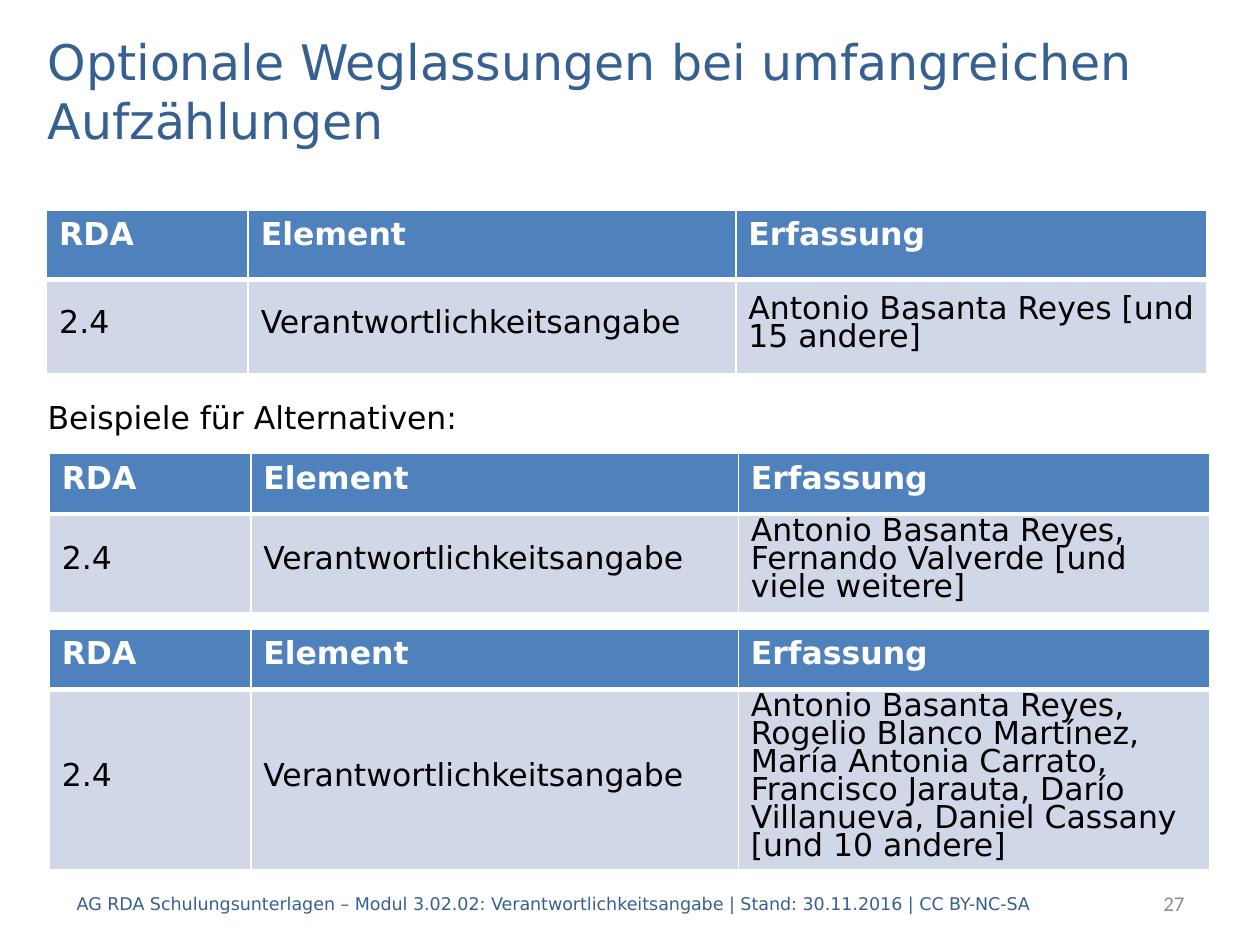
from dataclasses import dataclass

from lxml.etree import SubElement
from pptx import Presentation
from pptx.dml.color import RGBColor as RGB
from pptx.enum.shapes import MSO_SHAPE as SHAPE
from pptx.enum.text import MSO_ANCHOR as ANCHOR, MSO_AUTO_SIZE as AUTO, PP_ALIGN as ALIGN
from pptx.oxml.ns import qn
from pptx.util import Inches, Pt


@dataclass(frozen=True)
class Theme:
    """Colours, fonts and type sizes of the slide."""
    navy: str = "376092"
    header: str = "4F81BD"
    body: str = "D0D8E8"
    white: str = "FFFFFF"
    black: str = "000000"
    gray: str = "8C8C8C"
    font: str = "DejaVu Sans"
    number_font: str = "Calibri"
    title: int = 28
    text: int = 18
    number: int = 12
    footer: int = 10


T = Theme()
COLUMNS = (1.6, 3.87, 3.74)
HEADINGS = ("RDA", "Element", "Erfassung")


def style(p, size, color, font=T.font, bold=False):
    """Format every run of a paragraph."""
    for r in p.runs:
        r.font.size, r.font.name, r.font.bold = Pt(size), font, bold
        r.font.color.rgb = RGB.from_string(color)


def add_text(s, text, box, size, color, font=T.font, align=ALIGN.LEFT):
    """Add a wrapping text box centred vertically."""
    tf = s.shapes.add_textbox(*map(Inches, box)).text_frame
    tf.word_wrap, tf.auto_size = True, AUTO.NONE
    tf.vertical_anchor = ANCHOR.MIDDLE
    p = tf.paragraphs[0]
    p.text, p.alignment = text, align
    style(p, size, color, font)


def add_label(s, text, box):
    """Add a white rectangle that carries a subheading."""
    sp = s.shapes.add_shape(SHAPE.RECTANGLE, *map(Inches, box))
    sp.shadow.inherit = False
    sp.fill.solid()
    sp.fill.fore_color.rgb = RGB.from_string(T.white)
    sp.line.fill.background()
    tf = sp.text_frame
    tf.word_wrap, tf.auto_size = False, AUTO.SHAPE_TO_FIT_TEXT
    tf.vertical_anchor = ANCHOR.TOP
    p = tf.paragraphs[0]
    p.text, p.alignment = text, ALIGN.LEFT
    style(p, T.text, T.black)


def set_borders(cell, top, bottom):
    """Draw white cell borders, one point wide at the sides."""
    pr = cell._tc.get_or_add_tcPr()
    widths = {"a:lnL": 1, "a:lnR": 1, "a:lnT": top, "a:lnB": bottom}
    for tag, width in widths.items():
        ln = SubElement(pr, qn(tag), w=str(Pt(width)))
        fill = SubElement(ln, qn("a:solidFill"))
        SubElement(fill, qn("a:srgbClr"), val=T.white)


def fill_cell(cell, text, is_header):
    """Write and format a header or body cell."""
    set_borders(cell, *((1, 3) if is_header else (3, 1)))
    cell.fill.solid()
    cell.fill.fore_color.rgb = RGB.from_string(T.header if is_header else T.body)
    p = cell.text_frame.paragraphs[0]
    p.text = text
    style(p, T.text, T.white if is_header else T.black, bold=is_header)
    if not is_header:
        cell.vertical_anchor = ANCHOR.MIDDLE
        p.line_spacing = Pt(16)
        p.space_before = p.space_after = Pt(6)


def add_example(s, left, top, heights, entry):
    """Add a table that shows how one statement is recorded."""
    frame = s.shapes.add_table(2, len(COLUMNS), Inches(left), Inches(top),
                               Inches(sum(COLUMNS)), Inches(sum(heights)))
    table = frame.table
    for column, width in zip(table.columns, COLUMNS):
        column.width = Inches(width)
    rows = (HEADINGS, ("2.4", "Verantwortlichkeitsangabe", entry))
    for i, (height, texts) in enumerate(zip(heights, rows)):
        table.rows[i].height = Inches(height)
        for j, text in enumerate(texts):
            fill_cell(table.cell(i, j), text, i == 0)


def main():
    """Build and save the slide."""
    prs = Presentation()
    prs.slide_width, prs.slide_height = Inches(10), Inches(7.5)
    s = prs.slides.add_slide(prs.slide_layouts[6])
    add_text(s, "AG RDA Schulungsunterlagen – Modul 3.02.02: Verantwortlichkeitsangabe"
             " | Stand: 30.11.2016 | CC BY-NC-SA",
             (0.51, 6.97, 8.58, 0.4), T.footer, T.navy)
    add_text(s, "Optionale Weglassungen bei umfangreichen Aufzählungen",
             (0.28, 0.44, 9.45, 0.56), T.title, T.navy)
    add_example(s, 0.37, 1.67, (0.55, 0.75), "Antonio Basanta Reyes [und 15 andere]")
    add_label(s, "Beispiele für Alternativen:", (0.28, 3.11, 3.51, 0.4))
    add_example(s, 0.39, 3.6, (0.48, 0.78),
                "Antonio Basanta Reyes, Fernando Valverde [und viele weitere]")
    add_example(s, 0.39, 4.99, (0.48, 1.43),
                "Antonio Basanta Reyes, Rogelio Blanco Martínez, María Antonia Carrato, "
                "Francisco Jarauta, Darío Villanueva, Daniel Cassany [und 10 andere]")
    add_text(s, "27", (7.91, 6.97, 1.59, 0.4), T.number, T.gray, T.number_font, ALIGN.RIGHT)
    prs.save("out.pptx")


if __name__ == "__main__":
    main()
